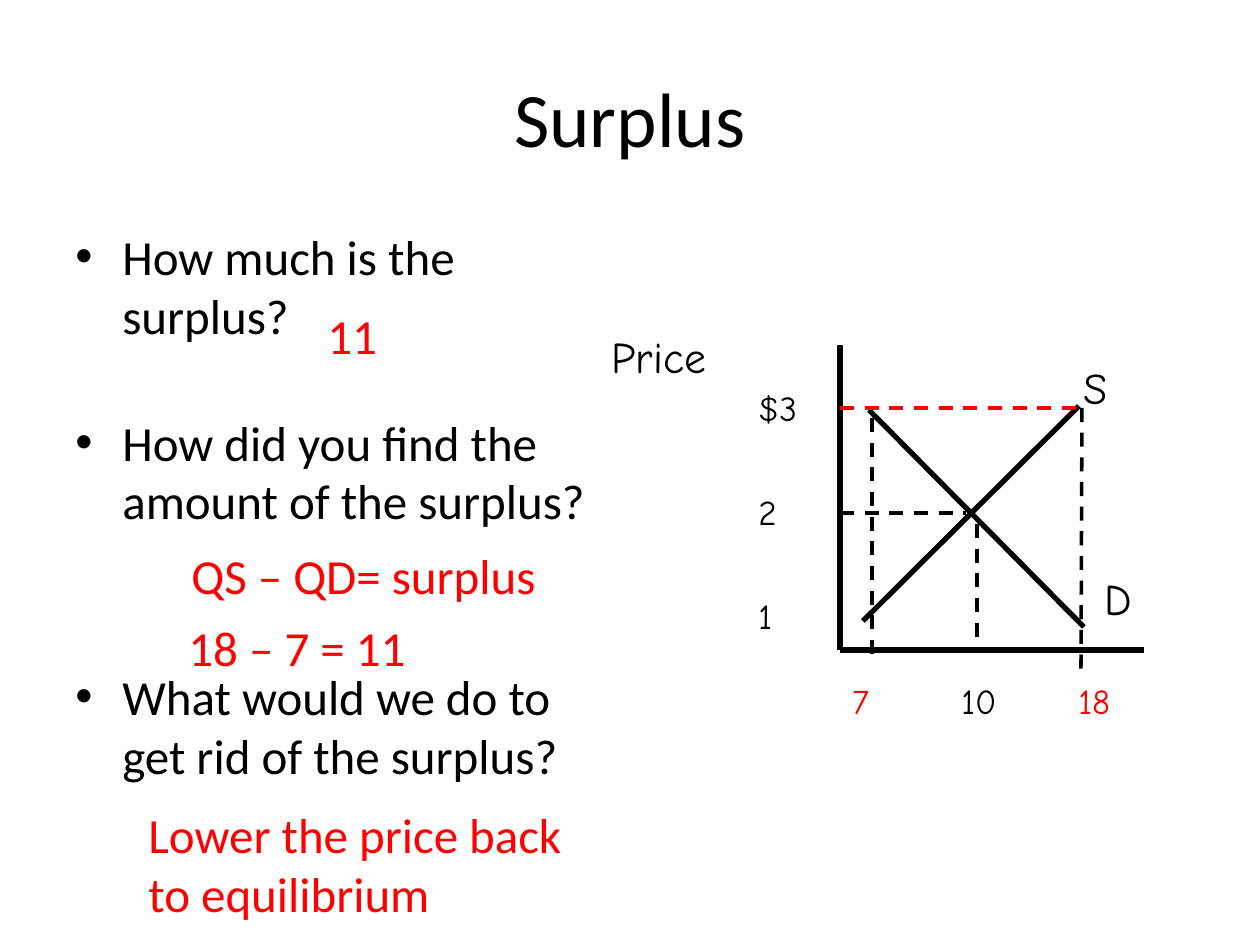
from lxml.etree import SubElement
from pptx import Presentation
from pptx.dml.color import RGBColor
from pptx.enum.dml import MSO_LINE
from pptx.enum.shapes import MSO_CONNECTOR
from pptx.enum.text import MSO_ANCHOR, PP_ALIGN
from pptx.oxml.ns import qn
from pptx.util import Emu, Pt

PX = 914400 // 126
THEME = {
    "black": RGBColor(0, 0, 0), "red": RGBColor(255, 0, 0),
    "text_font": "Calibri", "graph_font": "Comic Neue",
    "title": 44, "body": 28, "curve": 25, "tick": 20,
    "solid": 3, "dashed": 2,
}

# Content: boxes are left, top, width, height in px
TITLE = ("Surplus", (63, 38, 1134, 158))
QUESTIONS_BOX = (63, 220, 557, 624)
QUESTIONS = [  # wording, space before in points
    ("How much is the surplus?", 0),
    ("How did you find the amount of the surplus?", 39),
    ("What would we do to get rid of the surplus?", 78),
]
ANSWERS = [
    ("11", (315, 299, 121, 72)),
    ("QS – QD= surplus", (179, 539, 399, 72)),
    ("18 – 7 = 11", (176, 611, 399, 72)),
    ("Lower the price back to equilibrium", (136, 798, 462, 131)),
]
CURVE_LABELS = [
    ("Price", (599, 324, 136, 66)),
    ("S", (1071, 355, 95, 66)),
    ("D", (1092, 566, 95, 66)),
]
PRICES = ["$3", "2", "1"]
PRICE_LEFT, PRICE_TOP, PRICE_STEP = 746, 380, 104
QUANTITIES = [("7", 840, "red"), ("10", 949, "black"), ("18", 1066, "red")]
QUANTITY_TOP = 673
TICK_SIZE = (84, 54)
LINES = [  # from x, from y, to x, to y, colour, style
    (840, 345, 840, 650, "black", "solid"),    # price axis
    (1144, 650, 840, 650, "black", "solid"),   # quantity axis
    (1079, 406, 863, 621, "black", "solid"),   # supply
    (869, 410, 1084, 627, "black", "solid"),   # demand
    (840, 513, 966, 513, "black", "dashed"),   # equilibrium price
    (977, 524, 977, 650, "black", "dashed"),   # equilibrium quantity
    (840, 408, 1081, 408, "red", "dashed"),    # price floor
    (872, 418, 872, 660, "black", "dashed"),   # quantity demanded
    (1082, 408, 1081, 670, "black", "dashed"), # quantity supplied
]


def px(*values):
    return [Emu(value * PX) for value in values]


def style_paragraph(paragraph, text, size, colour="black", font="text_font"):
    run = paragraph.add_run()
    run.text = text
    settings = {"name": THEME[font], "size": Pt(THEME[size])}
    for name, value in settings.items():
        setattr(run.font, name, value)
    run.font.color.rgb = THEME[colour]


def add_text(slide, text, box, size, **look):
    frame = slide.shapes.add_textbox(*px(*box)).text_frame
    frame.word_wrap = True
    style_paragraph(frame.paragraphs[0], text, size, **look)
    return frame


def add_questions(slide):
    frame = slide.shapes.add_textbox(*px(*QUESTIONS_BOX)).text_frame
    frame.word_wrap = True
    for index, (text, space) in enumerate(QUESTIONS):
        paragraph = frame.add_paragraph() if index else frame.paragraphs[0]
        style_paragraph(paragraph, text, "body")
        paragraph.space_before = Pt(space)
        properties = paragraph._p.get_or_add_pPr()
        indent = 47 * PX
        properties.set("marL", str(indent))
        properties.set("indent", str(-indent))
        SubElement(properties, qn("a:buFont"), typeface="Arial")
        SubElement(properties, qn("a:buChar"), char="•")


def add_line(slide, start_x, start_y, end_x, end_y, colour, style):
    line = slide.shapes.add_connector(
        MSO_CONNECTOR.STRAIGHT, *px(start_x, start_y, end_x, end_y))
    line.line.color.rgb = THEME[colour]
    line.line.width = Pt(THEME[style])
    if style == "dashed":
        line.line.dash_style = MSO_LINE.DASH
    SubElement(line._element.spPr, qn("a:effectLst"))


def main():
    presentation = Presentation()
    presentation.slide_width, presentation.slide_height = px(1260, 945)
    slide = presentation.slides.add_slide(presentation.slide_layouts[6])

    # Title and questions
    title = add_text(slide, *TITLE, "title")
    title.vertical_anchor = MSO_ANCHOR.MIDDLE
    title.paragraphs[0].alignment = PP_ALIGN.CENTER
    add_questions(slide)

    # Supply and demand graph
    for line in LINES:
        add_line(slide, *line)
    for text, box in CURVE_LABELS:
        add_text(slide, text, box, "curve", font="graph_font")
    for index, text in enumerate(PRICES):
        box = (PRICE_LEFT, PRICE_TOP + index * PRICE_STEP, *TICK_SIZE)
        add_text(slide, text, box, "tick", font="graph_font")
    for text, left, colour in QUANTITIES:
        box = (left, QUANTITY_TOP, *TICK_SIZE)
        add_text(slide, text, box, "tick", colour=colour, font="graph_font")

    # Answers
    for text, box in ANSWERS:
        add_text(slide, text, box, "body", colour="red")

    presentation.save("out.pptx")


if __name__ == "__main__":
    main()
